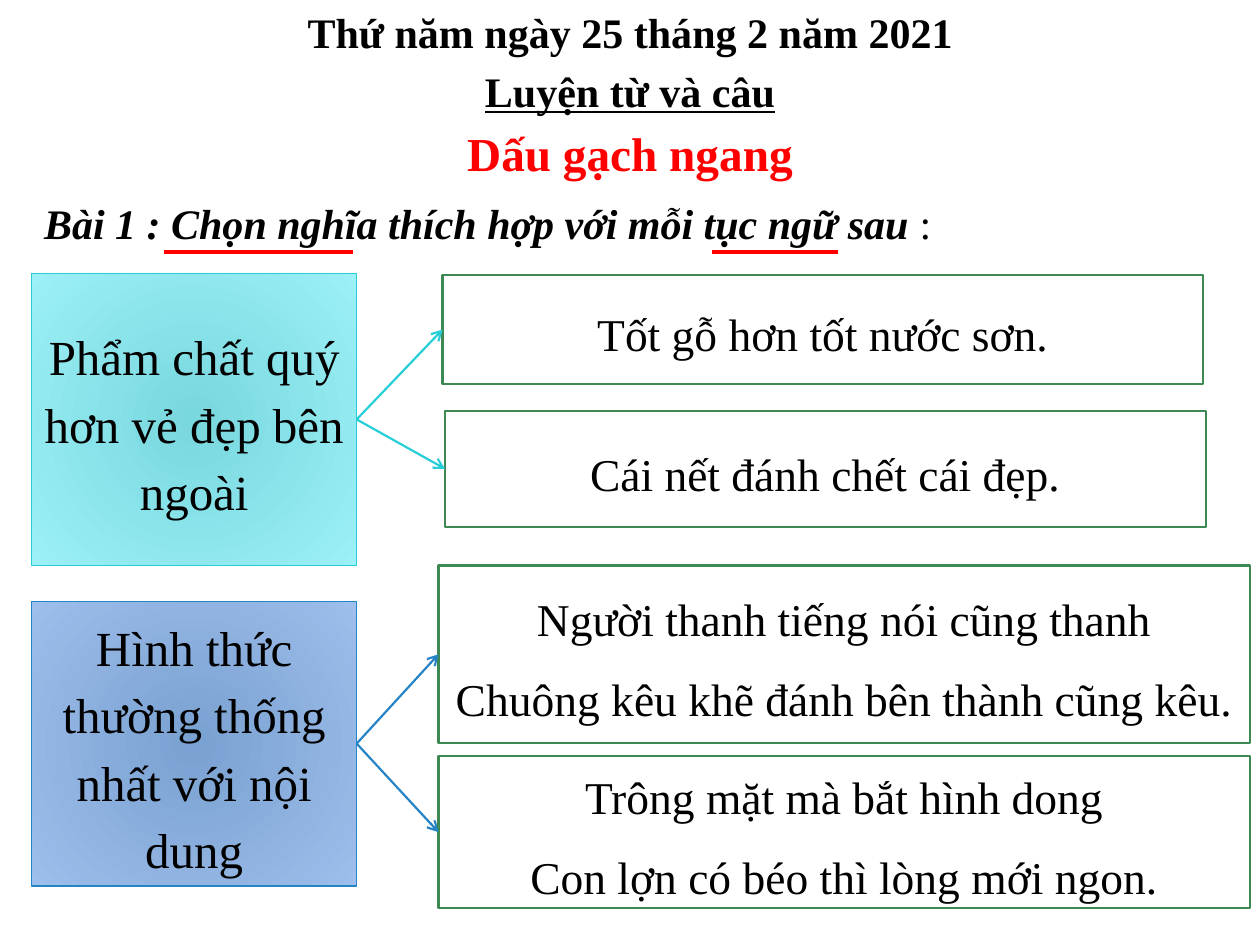
from lxml import etree
from pptx import Presentation
from pptx.dml.color import RGBColor
from pptx.enum import shapes, text
from pptx.oxml.ns import qn
from pptx.util import Cm, Pt

FONT = "Times New Roman"
BLACK = RGBColor(0x00, 0x00, 0x00)
WHITE = RGBColor(0xFF, 0xFF, 0xFF)
RED = RGBColor(0xFF, 0x00, 0x00)
GREEN = RGBColor(0x3E, 0x88, 0x53)
CYAN = RGBColor(0x27, 0xCE, 0xD7)
CYAN_INNER = RGBColor(0x79, 0xD7, 0xDE)
CYAN_OUTER = RGBColor(0x9C, 0xF0, 0xF7)
BLUE = RGBColor(0x26, 0x83, 0xC6)
BLUE_INNER = RGBColor(0x79, 0xA1, 0xD1)
BLUE_OUTER = RGBColor(0x9E, 0xBE, 0xEB)

PAGE_WIDTH = 25.4

# Each group: topic text, place, line, inner and outer colour, then its proverbs.
GROUPS = [
    ("Phẩm chất quý hơn vẻ đẹp bên ngoài", (0.64, 5.51, 6.55, 5.89),
     CYAN, CYAN_INNER, CYAN_OUTER,
     [("Tốt gỗ hơn tốt nước sơn.", (8.92, 5.54, 15.34, 2.21)),
      ("Cái nết đánh chết cái đẹp.", (8.97, 8.28, 15.34, 2.34))]),
    ("Hình thức thường thống nhất với nội dung", (0.64, 12.12, 6.55, 5.74),
     BLUE, BLUE_INNER, BLUE_OUTER,
     [("Người thanh tiếng nói cũng thanh\n"
       "Chuông kêu khẽ đánh bên thành cũng kêu.", (8.84, 11.4, 16.36, 3.58)),
      ("Trông mặt mà bắt hình dong\n"
       "Con lợn có béo thì lòng mới ngon.", (8.84, 15.24, 16.36, 3.07))]),
]


def lengths(place):
    return [Cm(value) for value in place]


def format_span(span, size, color=BLACK, bold=False, italic=False, underline=False):
    font = span.font
    font.name, font.size = FONT, Pt(size)
    font.bold, font.italic, font.underline = bold, italic, underline
    font.color.rgb = color


def format_heading(box, words, size, color=BLACK, underline=False):
    frame = box.text_frame
    frame.text = words
    frame.word_wrap = True
    frame.auto_size = text.MSO_AUTO_SIZE.NONE
    frame.vertical_anchor = text.MSO_ANCHOR.TOP
    frame.margin_left = frame.margin_right = Cm(0.23)
    frame.margin_top = frame.margin_bottom = Cm(0.1)
    para = frame.paragraphs[0]
    para.alignment = text.PP_ALIGN.CENTER
    para.line_spacing = 1.0
    para.space_before = Pt(3)
    format_span(para.runs[0], size, color, bold=True, underline=underline)


def add_heading(page, words, top, underline=False):
    box = page.shapes.add_textbox(*lengths((0, top, PAGE_WIDTH, 1.24)))
    format_heading(box, words, 24, underline=underline)


def place_title(page, words):
    title = page.shapes.title
    title.left, title.top, title.width, title.height = lengths((0, 2.41, PAGE_WIDTH, 1.37))
    format_heading(title, words, 27, RED)


def add_task(page):
    box = page.shapes.add_textbox(*lengths((0.64, 3.86, 23.55, 1.27)))
    box.text_frame.word_wrap = True
    para = box.text_frame.paragraphs[0]
    for words, strong in (("Bài 1 : Chọn nghĩa thích hợp với mỗi tục ngữ sau ", True),
                          (":", False)):
        span = para.add_run()
        span.text = words
        format_span(span, 24, bold=strong, italic=strong)


def add_box(page, words, place, size, line_color, line_width):
    box = page.shapes.add_shape(shapes.MSO_SHAPE.RECTANGLE, *lengths(place))
    box.shadow.inherit = False
    box.line.color.rgb = line_color
    box.line.width = Pt(line_width)
    frame = box.text_frame
    frame.text = words
    frame.word_wrap = True
    frame.vertical_anchor = text.MSO_ANCHOR.MIDDLE
    for para in frame.paragraphs:
        para.alignment = text.PP_ALIGN.CENTER
        para.line_spacing = 1.15
        para.space_after = Pt(10)
        format_span(para.runs[0], size)
    return box


def fill_radial(box, inner, outer):
    """Fill a box with a gradient that runs from its centre outwards."""
    box.fill.gradient()
    for stop, color in zip(box.fill.gradient_stops, (inner, outer)):
        stop.color.rgb = color
    gradient = box._element.spPr.find(qn("a:gradFill"))
    gradient.remove(gradient.find(qn("a:lin")))
    circle = etree.SubElement(gradient, qn("a:path"), path="circle")
    etree.SubElement(circle, qn("a:fillToRect"),
                     dict.fromkeys("ltrb", "100000"))


def add_line(page, start, end, color, width):
    line = page.shapes.add_connector(shapes.MSO_CONNECTOR.STRAIGHT,
                                     *lengths(start), *lengths(end))
    line.line.color.rgb = color
    line.line.width = Pt(width)
    etree.SubElement(line._element.spPr, qn("a:effectLst"))
    return line


def add_arrow(page, topic, proverb, color):
    arrow = add_line(page, (0, 0), (1, 1), color, 1.25)
    arrow.begin_connect(topic, 3)
    arrow.end_connect(proverb, 1)
    etree.SubElement(arrow.line._get_or_add_ln(), qn("a:tailEnd"), type="arrow")


def add_group(page, words, place, color, inner, outer, proverbs):
    """Add a topic box with an arrow to each of its proverbs."""
    topic = add_box(page, words, place, 28, color, 0.75)
    fill_radial(topic, inner, outer)
    for saying, saying_place in proverbs:
        proverb = add_box(page, saying, saying_place, 26, GREEN, 1.25)
        proverb.fill.solid()
        proverb.fill.fore_color.rgb = WHITE
        add_arrow(page, topic, proverb, color)


def main():
    deck = Presentation()
    deck.slide_width, deck.slide_height = Cm(PAGE_WIDTH), Cm(19.05)
    page = deck.slides.add_slide(deck.slide_layouts[5])
    add_heading(page, "Thứ năm ngày 25 tháng 2 năm 2021", 0.03)
    add_heading(page, "Luyện từ và câu", 1.22, underline=True)
    place_title(page, "Dấu gạch ngang")
    add_task(page)
    for left, right in ((3.3, 7.11), (14.35, 16.89)):
        add_line(page, (left, 5.08), (right, 5.08), RED, 2.75)
    for group in GROUPS:
        add_group(page, *group)
    deck.save("out.pptx")


if __name__ == "__main__":
    main()
